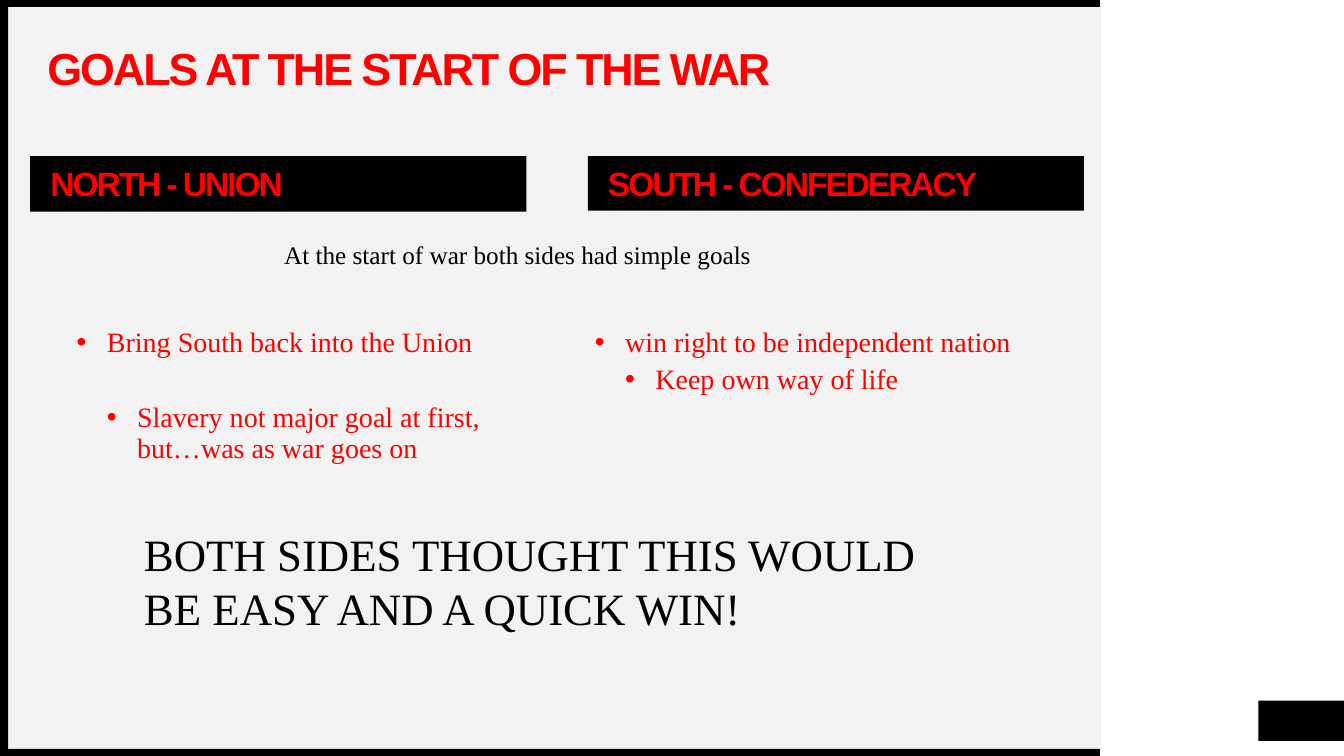
from lxml import etree
from pptx import Presentation
from pptx.dml.color import RGBColor
from pptx.enum import shapes, text
from pptx.oxml.ns import qn
from pptx.util import Inches, Pt

RED = RGBColor(0xFF, 0x00, 0x00)
BLACK = RGBColor(0x00, 0x00, 0x00)
PANEL = RGBColor(0xF2, 0xF2, 0xF2)
SERIF = "Times New Roman"

prs = Presentation()
prs.slide_width, prs.slide_height = Inches(13.33), Inches(7.5)
s = prs.slides.add_slide(prs.slide_layouts[6])


def add_frame(box, insets=(0, 0, 0, 0), fill=None):
    """Add a filled rectangle or, without a fill, a text box; return its text frame."""
    box = [Inches(v) for v in box]
    if fill is None:
        sp = s.shapes.add_textbox(*box)
    else:
        sp = s.shapes.add_shape(shapes.MSO_SHAPE.RECTANGLE, *box)
        sp.shadow.inherit = False
        sp.fill.solid()
        sp.fill.fore_color.rgb = fill
        sp.line.fill.background()
    tf = sp.text_frame
    tf.word_wrap = True
    tf.margin_left, tf.margin_top, tf.margin_right, tf.margin_bottom = map(Inches, insets)
    return tf


def add_run(p, words, size, font, color, bold=False, spacing=0):
    """Add a run; spacing is the letter spacing in points."""
    r = p.add_run()
    r.text = words
    r.font.size, r.font.name, r.font.bold = Pt(size), font, bold
    r.font.color.rgb = color
    if spacing:
        r.font._element.set("spc", str(int(spacing * 100)))


# Background panel, corner block and black border
for box, fill in [
    ((0.08, 0.07, 10.84, 7.36), PANEL),
    ((12.48, 6.95, 0.86, 0.4), BLACK),
    ((0, 7.43, 10.91, 0.07), BLACK),
    ((0, 0, 10.91, 0.07), BLACK),
    ((0, 0.03, 0.08, 7.47), BLACK),
]:
    add_frame(box, fill=fill)

# Title and column headings
for words, box, insets, fill, size in [
    ("GOALS AT THE START OF THE WAR", (0.47, 0.47, 10.06, 0.47), (0, 0, 0, 0), None, 32),
    ("NORTH - UNION", (0.3, 1.55, 4.92, 0.55), (0.2, 0.04, 0, 0), BLACK, 24),
    ("SOUTH - CONFEDERACY", (5.83, 1.55, 4.92, 0.54), (0.2, 0.04, 0, 0), BLACK, 24),
]:
    tf = add_frame(box, insets, fill)
    tf.vertical_anchor = text.MSO_ANCHOR.MIDDLE
    p = tf.paragraphs[0]
    p.alignment = text.PP_ALIGN.LEFT
    p.line_spacing = 0.9
    add_run(p, words, size, "Arial", RED, True, -1.5)

# Goals of each side: main goal, then a sub-goal set off by its own space before
for left, goals in [
    (0.47, [("Bring South back into the Union", 5),
            ("Slavery not major goal at first, but…was as war goes on", 32)]),
    (5.61, [("win right to be independent nation", 5),
            ("Keep own way of life", 5)]),
]:
    tf = add_frame((left, 3.26, 4.92, 2.76))
    for i, (goal, before) in enumerate(goals):
        p = tf.add_paragraph() if i else tf.paragraphs[0]
        p.level = i + 1
        p.line_spacing = 0.9
        p.space_before = Pt(before)
        add_run(p, goal, 20, SERIF, RED)
        pPr = p._p.get_or_add_pPr()
        pPr.set("marL", str(Inches(0.59 + 0.3 * i)))
        pPr.set("indent", str(Inches(-0.3)))
        etree.SubElement(pPr, qn("a:buFont"), typeface="Arial")
        etree.SubElement(pPr, qn("a:buChar"), char="•")

# Introduction and conclusion
for words, box, size in [
    ("At the start of war both sides had simple goals", (2.72, 2.32, 6.22, 0.71), 18),
    ("BOTH SIDES THOUGHT THIS WOULD BE EASY AND A QUICK WIN!", (1.33, 5.18, 8.34, 1.18), 32),
]:
    tf = add_frame(box, (0.1, 0.05, 0.1, 0.05))
    add_run(tf.paragraphs[0], words, size, SERIF, BLACK)

prs.save("out.pptx")
